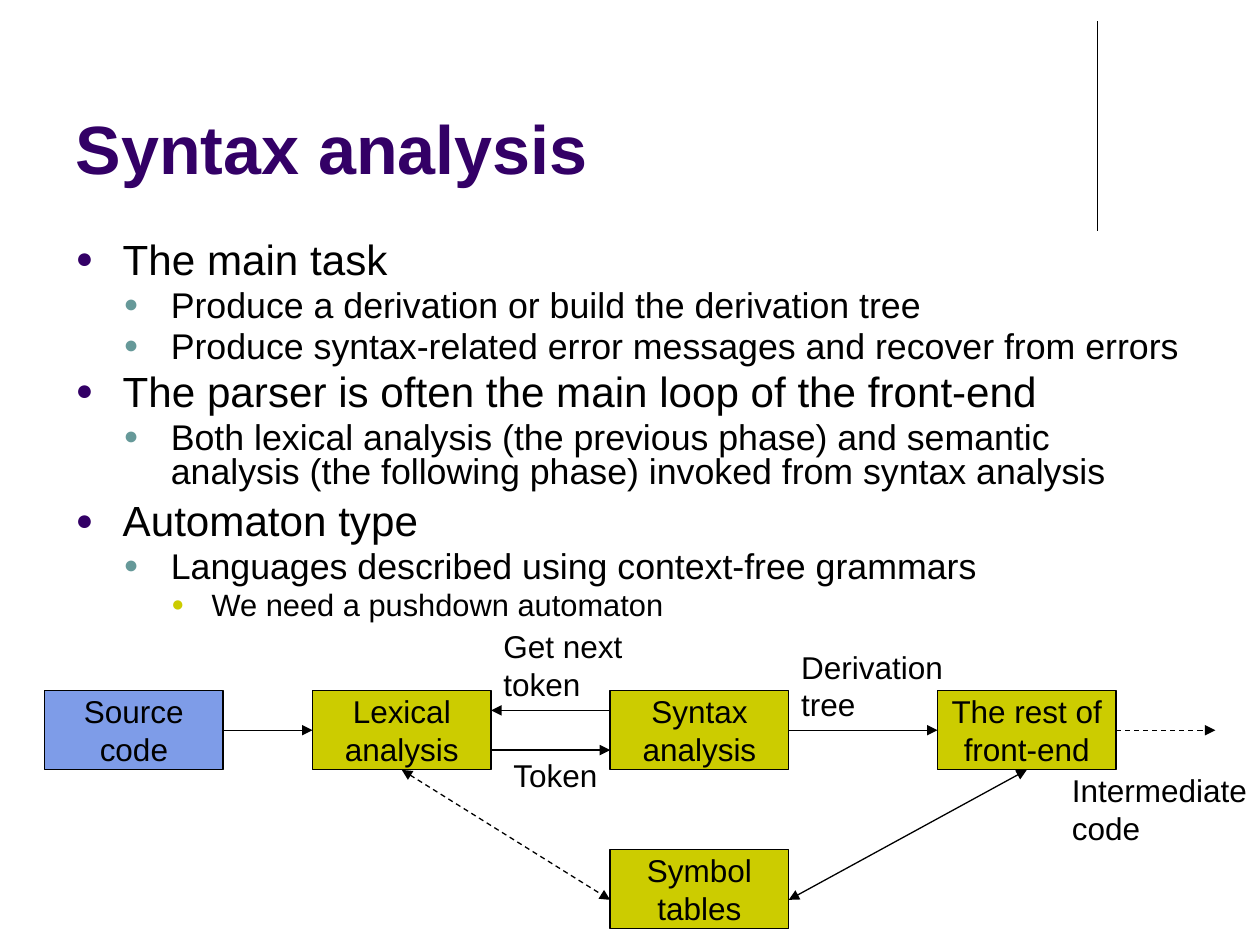
"""Build a slide on syntax analysis with its front-end data flow."""
from lxml.etree import SubElement
from pptx import Presentation
from pptx.dml.color import RGBColor
from pptx.enum.dml import MSO_LINE
from pptx.enum.shapes import MSO_CONNECTOR, MSO_SHAPE
from pptx.enum.text import MSO_ANCHOR, MSO_AUTO_SIZE, PP_ALIGN
from pptx.oxml.ns import qn
from pptx.util import Cm, Pt

BLACK = RGBColor(0x00, 0x00, 0x00)
PURPLE = RGBColor(0x33, 0x00, 0x66)
TEAL = RGBColor(0x66, 0x99, 0x99)
OLIVE = RGBColor(0xCC, 0xCC, 0x00)
BLUE = RGBColor(0x7E, 0x9C, 0xE8)
FONT = "Arial"

TITLE = "Syntax analysis"
OUTLINE = [
    (0, 0.8, "The main task"),
    (1, 0.8, "Produce a derivation or build the derivation tree"),
    (1, 0.8, "Produce syntax-related error messages and recover from errors"),
    (0, 0.8, "The parser is often the main loop of the front-end"),
    (1, 0.8, "Both lexical analysis (the previous phase) and semantic analysis "
             "(the following phase) invoked from syntax analysis"),
    (0, 0.9, "Automaton type"),
    (1, 0.8, "Languages described using context-free grammars"),
    (2, 0.8, "We need a pushdown automaton"),
]
LEVELS = [
    {"size": 24.1, "margin": 0.95, "hanging": 0.95, "color": PURPLE},
    {"size": 20.4, "margin": 1.92, "hanging": 0.95, "color": TEAL},
    {"size": 17.6, "margin": 2.74, "hanging": 0.81, "color": OLIVE},
]

BOX_WIDTH, BOX_HEIGHT = 3.6, 1.6
ROW_TOP, SYMBOL_TOP = 13.92, 17.12
ROW_MIDDLE = ROW_TOP + BOX_HEIGHT / 2
TOKEN_OFFSET = 0.4
TABLE_ARROW_Y = SYMBOL_TOP + 1.02
BOXES = {
    "source": (0.9, ROW_TOP, BLUE, "Source\ncode"),
    "lexical": (6.3, ROW_TOP, OLIVE, "Lexical\nanalysis"),
    "syntax": (12.3, ROW_TOP, OLIVE, "Syntax\nanalysis"),
    "rest": (18.9, ROW_TOP, OLIVE, "The rest of\nfront-end"),
    "symbol": (12.3, SYMBOL_TOP, OLIVE, "Symbol\ntables"),
}
LABELS = [
    (9.9, 12.52, 3.2, 1.8, True, "Get next\ntoken"),
    (10.1, 15.11, 2.24, 1.02, False, "Token"),
    (21.36, 15.42, 4.04, 1.8, False, "Intermediate\ncode"),
    (15.9, 12.93, 3.4, 1.8, False, "Derivation\ntree"),
]
BOTTOM, LEFT, RIGHT = 2, 1, 3
LEXICAL_RIGHT = BOXES["lexical"][0] + BOX_WIDTH
SYNTAX_LEFT = BOXES["syntax"][0]
SYMBOL_LEFT = BOXES["symbol"][0]
ARROWS = [
    (("source", RIGHT), ("lexical", LEFT), False, False),
    ((LEXICAL_RIGHT, ROW_MIDDLE + TOKEN_OFFSET),
     (SYNTAX_LEFT, ROW_MIDDLE + TOKEN_OFFSET), False, False),
    ((SYNTAX_LEFT, ROW_MIDDLE - TOKEN_OFFSET),
     (LEXICAL_RIGHT, ROW_MIDDLE - TOKEN_OFFSET), False, False),
    (("lexical", BOTTOM), (SYMBOL_LEFT, TABLE_ARROW_Y), True, True),
    (("rest", BOTTOM), (SYMBOL_LEFT + BOX_WIDTH, TABLE_ARROW_Y), False, True),
    (("rest", RIGHT), (24.5, ROW_MIDDLE), True, False),
    (("syntax", RIGHT), ("rest", LEFT), False, False),
]


def place(shape, left, top, width, height):
    shape.left, shape.top = Cm(left), Cm(top)
    shape.width, shape.height = Cm(width), Cm(height)


def add_text(paragraph, text, size, color=BLACK, bold=False):
    for index, line in enumerate(text.split("\n")):
        if index:
            paragraph.add_line_break()
        run = paragraph.add_run()
        run.text = line
        run.font.name, run.font.size = FONT, Pt(size)
        run.font.color.rgb, run.font.bold = color, bold


def add_bullet(paragraph, level):
    properties = paragraph._p.get_or_add_pPr()
    properties.set("marL", str(Cm(level["margin"])))
    properties.set("indent", str(-Cm(level["hanging"])))
    color = SubElement(properties, qn("a:buClr"))
    SubElement(color, qn("a:srgbClr"), val=str(level["color"]))
    SubElement(properties, qn("a:buSzPct"), val="70000")
    SubElement(properties, qn("a:buFont"), typeface=FONT)
    SubElement(properties, qn("a:buChar"), char="●")


def fill_title(title):
    place(title, 1.27, 0.33, 20.96, 3.6)
    frame = title.text_frame
    frame.auto_size = MSO_AUTO_SIZE.NONE
    frame.vertical_anchor = MSO_ANCHOR.BOTTOM
    frame.paragraphs[0].alignment = PP_ALIGN.LEFT
    add_text(frame.paragraphs[0], TITLE, 39, PURPLE, True)


def fill_outline(body):
    place(body, 1.27, 4.78, 22.86, 8.18)
    frame = body.text_frame
    frame.auto_size = MSO_AUTO_SIZE.NONE
    for index, (depth, spacing, text) in enumerate(OUTLINE):
        level = LEVELS[depth]
        paragraph = frame.add_paragraph() if index else frame.paragraphs[0]
        paragraph.level = depth
        paragraph.line_spacing = spacing
        paragraph.space_before = Pt(round(level["size"] * 0.2, 1) if index else 0)
        add_bullet(paragraph, level)
        add_text(paragraph, text, level["size"])


def add_box(slide, left, top, fill, text):
    box = slide.shapes.add_shape(MSO_SHAPE.RECTANGLE, Cm(left), Cm(top),
                                 Cm(BOX_WIDTH), Cm(BOX_HEIGHT))
    box.shadow.inherit = False
    box.fill.solid()
    box.fill.fore_color.rgb = fill
    box.line.color.rgb, box.line.width = BLACK, Pt(0.75)
    frame = box.text_frame
    frame.word_wrap = False
    frame.vertical_anchor = MSO_ANCHOR.MIDDLE
    frame.paragraphs[0].alignment = PP_ALIGN.CENTER
    add_text(frame.paragraphs[0], text, 18)
    return box


def add_line(slide, start, end, boxes, dashed=False, heads=()):
    line = slide.shapes.add_connector(MSO_CONNECTOR.STRAIGHT, 0, 0, 0, 0)
    if start[0] in boxes:
        line.begin_connect(boxes[start[0]], start[1])
    else:
        line.begin_x, line.begin_y = Cm(start[0]), Cm(start[1])
    if end[0] in boxes:
        line.end_connect(boxes[end[0]], end[1])
    else:
        line.end_x, line.end_y = Cm(end[0]), Cm(end[1])
    line.line.color.rgb, line.line.width = BLACK, Pt(0.75)
    if dashed:
        line.line.dash_style = MSO_LINE.DASH
    for head in heads:
        SubElement(line.line._get_or_add_ln(), qn(head), type="triangle")
    SubElement(line._element.spPr, qn("a:effectLst"))


def add_label(slide, left, top, width, height, wrap, text):
    label = slide.shapes.add_textbox(Cm(left), Cm(top), Cm(width), Cm(height))
    label.text_frame.word_wrap = wrap
    add_text(label.text_frame.paragraphs[0], text, 18)


def main():
    presentation = Presentation()
    presentation.slide_width, presentation.slide_height = Cm(25.4), Cm(19.05)
    slide = presentation.slides.add_slide(presentation.slide_layouts[1])
    fill_title(slide.shapes.title)
    fill_outline(slide.placeholders[1])
    add_line(slide, (22.12, 0.43), (22.12, 4.65), {})
    boxes = {name: add_box(slide, *box) for name, box in BOXES.items()}
    for start, end, dashed, double in ARROWS:
        heads = ("a:headEnd", "a:tailEnd") if double else ("a:tailEnd",)
        add_line(slide, start, end, boxes, dashed, heads)
    for label in LABELS:
        add_label(slide, *label)
    presentation.save("out.pptx")


if __name__ == "__main__":
    main()
